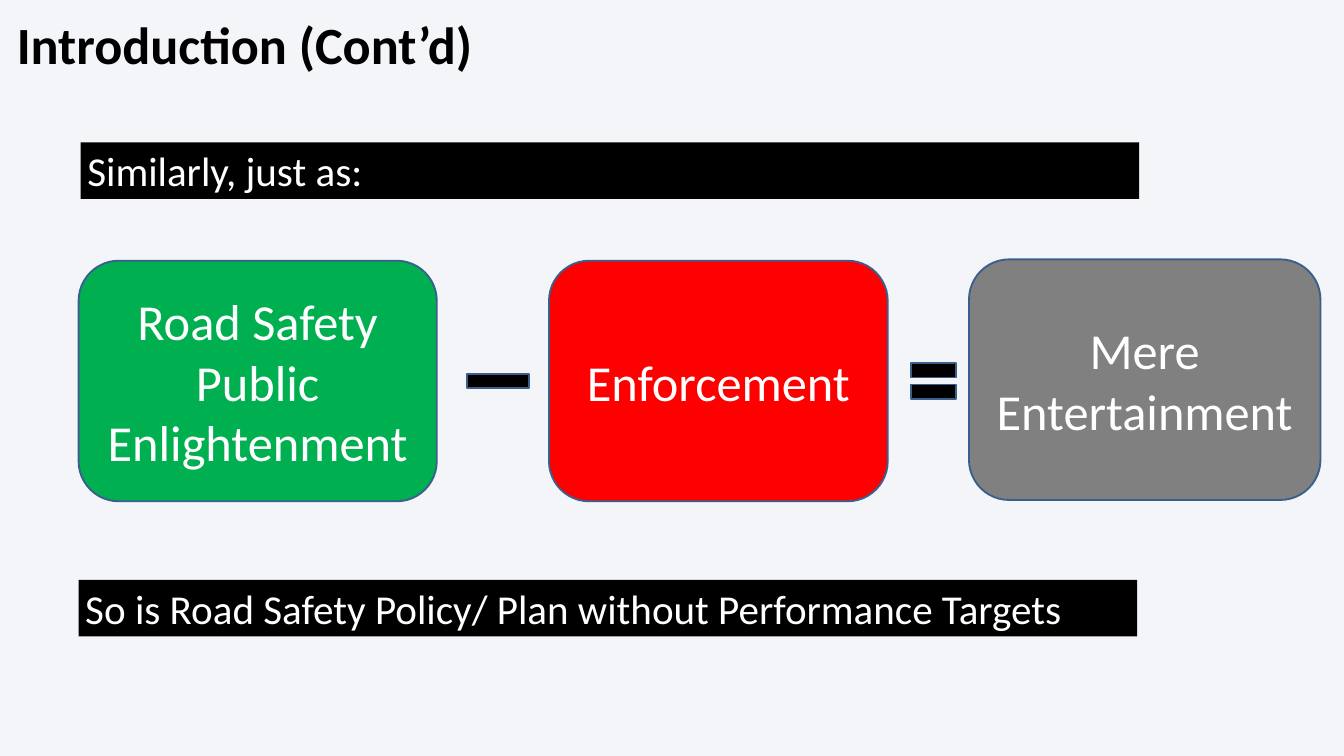
from pptx import Presentation
from pptx.dml.color import RGBColor
from pptx.enum.shapes import MSO_SHAPE
from pptx.enum.text import MSO_ANCHOR, PP_ALIGN
from pptx.util import Inches, Pt

RECTANGLE, ROUNDED = MSO_SHAPE.RECTANGLE, MSO_SHAPE.ROUNDED_RECTANGLE
MINUS, EQUAL = MSO_SHAPE.MATH_MINUS, MSO_SHAPE.MATH_EQUAL
TOP, MIDDLE = MSO_ANCHOR.TOP, MSO_ANCHOR.MIDDLE
LEFT, CENTER = PP_ALIGN.LEFT, PP_ALIGN.CENTER

FONT = "Calibri"
COLORS = {
    "background": "F3F5F9",
    "black": "000000",
    "white": "FFFFFF",
    "outline": "3A5F8C",
    "green": "00B050",
    "red": "FF0000",
    "gray": "808080",
}


def color(name):
    return RGBColor.from_string(COLORS[name])


def write(shape, text, size, ink, align=LEFT, anchor=TOP, bold=False):
    frame = shape.text_frame
    frame.word_wrap = True
    frame.vertical_anchor = anchor
    para = frame.paragraphs[0]
    para.text = text
    para.alignment = align
    para.font.name = FONT
    para.font.size = Pt(size)
    para.font.bold = bold
    para.font.color.rgb = color(ink)


def add_filled_shape(page, kind, box, fill, outlined=True):
    shape = page.shapes.add_shape(kind, *map(Inches, box))
    shape.shadow.inherit = False
    shape.fill.solid()
    shape.fill.fore_color.rgb = color(fill)
    if outlined:
        shape.line.color.rgb = color("outline")
        shape.line.width = Pt(2)
    else:
        shape.line.fill.background()
    return shape


def add_title(page, box, text):
    title = page.shapes.add_textbox(*map(Inches, box))
    frame = title.text_frame
    frame.margin_left = frame.margin_right = 0
    frame.margin_top = frame.margin_bottom = 0
    write(title, text, 56, "black", bold=True)


def add_banner(page, box, text):
    banner = add_filled_shape(page, RECTANGLE, box, "black", outlined=False)
    write(banner, text, 44, "white")


def add_equation(page, box):
    left, top, width, height = box
    # Terms: offset from the left, rise above the row, width, fill, text
    terms = [
        (0, 0, 5.33, "green", "Road Safety Public Enlightenment"),
        (7, 0, 5.04, "red", "Enforcement"),
        (width - 5.23, 0.02, 5.23, "gray", "Mere Entertainment"),
    ]
    for offset, rise, term_width, fill, text in terms:
        term_box = (left + offset, top - rise, term_width, height)
        term = add_filled_shape(page, ROUNDED, term_box, fill)
        write(term, text, 54, "white", CENTER, MIDDLE)

    # Operators, centred on the row of terms
    sign_height = 0.89
    sign_top = top + (height - sign_height) / 2
    for kind, offset, sign_width in [(MINUS, 5.62, 1.25), (EQUAL, 12.26, 0.92)]:
        sign_box = (left + offset, sign_top, sign_width, sign_height)
        add_filled_shape(page, kind, sign_box, "black")


def main():
    deck = Presentation()
    deck.slide_width, deck.slide_height = Inches(20), Inches(11.25)
    page = deck.slides.add_slide(deck.slide_layouts[6])
    page.background.fill.solid()
    page.background.fill.fore_color.rgb = color("background")

    add_title(page, (0.25, 0.18, 7.17, 0.94), "Introduction (Cont’d)")
    add_banner(page, (1.2, 2.12, 15.75, 0.84), "Similarly, just as:")
    add_equation(page, (1.17, 3.88, 18.48, 3.58))
    add_banner(page, (1.17, 8.63, 15.75, 0.84),
               "So is Road Safety Policy/ Plan without Performance Targets")
    deck.save("out.pptx")


if __name__ == "__main__":
    main()
